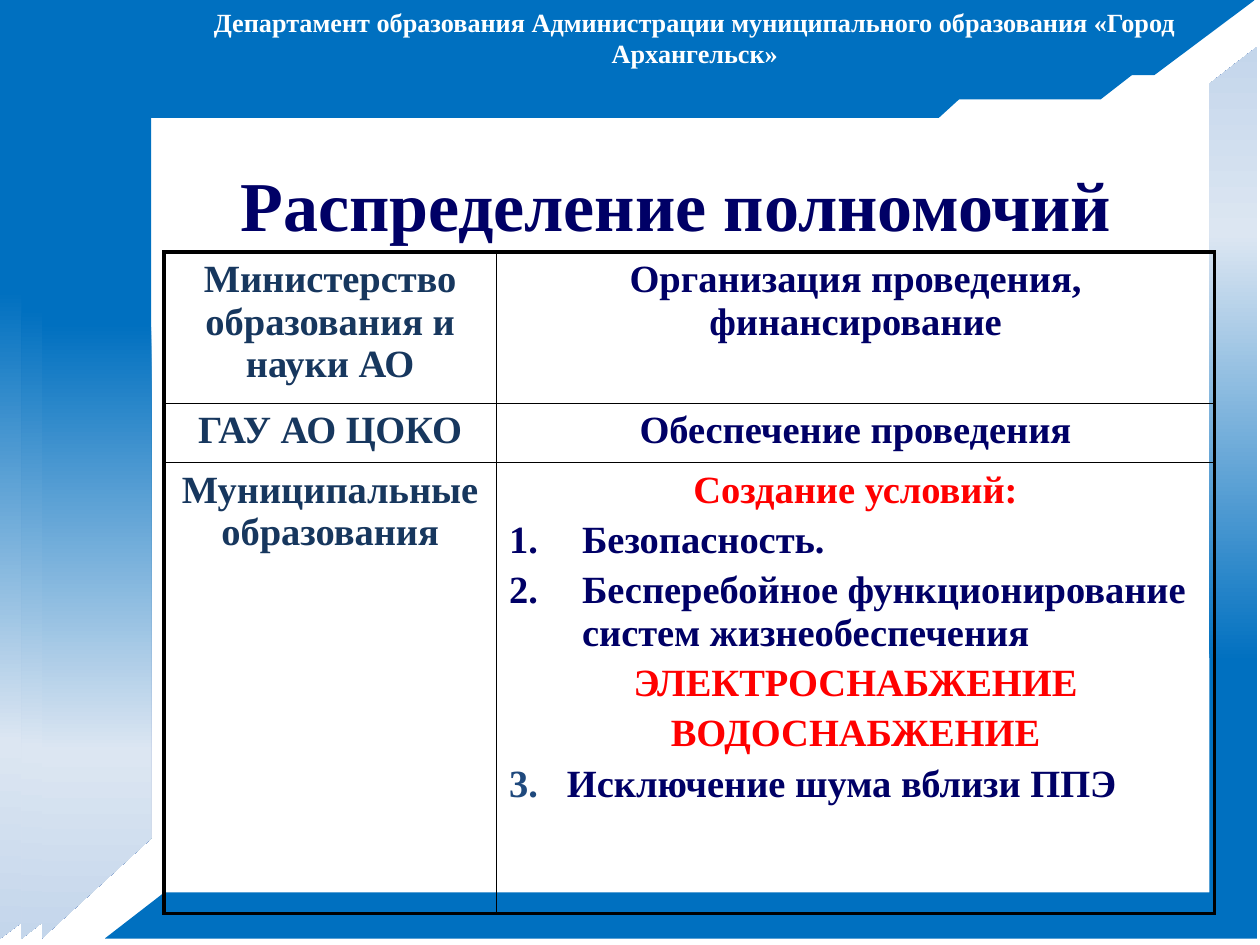
from lxml.etree import SubElement, fromstring
from pptx import Presentation
from pptx.dml.color import RGBColor
from pptx.enum.shapes import MSO_SHAPE
from pptx.enum.text import PP_ALIGN
from pptx.oxml.ns import nsdecls, qn
from pptx.util import Inches, Pt

BLUE = RGBColor(0x00, 0x70, 0xC0)
PALE = RGBColor(0xDC, 0xE6, 0xF2)
MIST = RGBColor(0xC4, 0xD6, 0xEB)
PINK = RGBColor(0xFF, 0xEB, 0xFA)
WHITE = RGBColor(0xFF, 0xFF, 0xFF)
BLACK = RGBColor(0x00, 0x00, 0x00)
NAVY = RGBColor(0x00, 0x00, 0x66)
STEEL = RGBColor(0x17, 0x37, 0x5E)
SLATE = RGBColor(0x1F, 0x49, 0x7D)
RED = RGBColor(0xFF, 0x00, 0x00)

deck = Presentation()
deck.slide_width, deck.slide_height = Inches(10), Inches(7.5)
slide = deck.slides.add_slide(deck.slide_layouts[6])
col, row = deck.slide_width / 100, deck.slide_height / 100


def place(x, y, w, h):
    return [int(v) for v in (x * col, y * row, w * col, h * row)]


def write(para, text, size, color, align):
    para.alignment = align
    run = para.add_run()
    run.text = text
    look = {"name": "Times New Roman", "size": Pt(size), "bold": True}
    for key, value in look.items():
        setattr(run.font, key, value)
    run.font.color.rgb = color


stops = [(31, BLUE), (79, PALE), (100, MIST), (100, PINK)]
marks = "".join(
    f'<a:gs pos="{pos * 1000}"><a:srgbClr val="{tint}"/></a:gs>' for pos, tint in stops
)
blend = (
    f'<a:gradFill {nsdecls("a")} rotWithShape="1"><a:gsLst>{marks}</a:gsLst>'
    '<a:lin ang="5400000" scaled="0"/></a:gradFill>'
)
frames = [
    ((0, 0, 99.6, 99.33), 0.08, 0.16, 0),
    ((1.7, 2.8, 93.1, 96.53), 0.08, 0.112, 0),
    ((3.3, 4.93, 77.4, 94.4), 0.08, 0.123, 0),
    ((8.3, 4.93, 91.5, 94.4), 0.052, 0.054, 180),
]
for box, top, side, turn in frames:
    frame = slide.shapes.add_shape(MSO_SHAPE.HALF_FRAME, *place(*box))
    frame.adjustments[0], frame.adjustments[1] = top, side
    frame.rotation = turn
    frame.shadow.inherit = False
    frame.line.fill.background()
    frame._element.spPr.find(qn("a:prstGeom")).addnext(fromstring(blend))

labels = [
    ((9.5, 0, 91.3, 4.67), 15, WHITE,
     "Департамент образования Администрации муниципального образования «Город Архангельск»"),
    ((16.9, 16.4, 73.5, 10.27), 40, NAVY, "Распределение полномочий"),
]
for box, size, color, text in labels:
    label = slide.shapes.add_textbox(*place(*box)).text_frame
    label.word_wrap = True
    write(label.paragraphs[0], text, size, color, PP_ALIGN.CENTER)

MID, JUST, LEFT = PP_ALIGN.CENTER, PP_ALIGN.JUSTIFY, PP_ALIGN.LEFT
cells = [
    [[("Министерство образования и науки АО", STEEL, MID, 0, None)],
     [("Организация проведения, финансирование", NAVY, MID, 0, None)]],
    [[("ГАУ АО ЦОКО", STEEL, MID, 0, None)],
     [("Обеспечение проведения", NAVY, MID, 0, None)]],
    [[("Муниципальные образования", STEEL, MID, 0, None)],
     [("Создание условий:", RED, MID, 0.58, None),
      ("Безопасность.", NAVY, JUST, 0.58, (1, NAVY)),
      ("Бесперебойное функционирование систем жизнеобеспечения", NAVY, LEFT, 0.58, (1, NAVY)),
      ("ЭЛЕКТРОСНАБЖЕНИЕ", RED, MID, 0.58, None),
      ("ВОДОСНАБЖЕНИЕ", RED, MID, 0.58, None),
      ("Исключение шума вблизи ППЭ", NAVY, JUST, 0.46, (3, SLATE))]],
]
table = slide.shapes.add_table(3, 2, *place(13, 26.67, 83.4, 70)).table
table.first_row = table.horz_banding = False
for part, width in zip(table.columns, (26.4, 57)):
    part.width = int(width * col)
for part, height in zip(table.rows, (16, 6.27, 47.73)):
    part.height = int(height * row)

for r, line in enumerate(cells):
    for c, paras in enumerate(line):
        cell = table.cell(r, c)
        for i, (text, color, align, hang, item) in enumerate(paras):
            frame = cell.text_frame
            para = frame.add_paragraph() if i else frame.paragraphs[0]
            props = para._p.get_or_add_pPr()
            if hang:
                props.set("marL", str(Inches(hang)))
                props.set("indent", str(-Inches(hang)))
            if i:
                para.space_before = Pt(4.4)
            if item:
                start, tint = item
                shade = SubElement(props, qn("a:buClr"))
                SubElement(shade, qn("a:srgbClr"), val=str(tint))
                SubElement(props, qn("a:buFont"), typeface="Times New Roman")
                mark = SubElement(props, qn("a:buAutoNum"), type="arabicPeriod")
                if start > 1:
                    mark.set("startAt", str(start))
            write(para, text, 22, color, align)
        cell.fill.background()
        edges = {"L": c == 0, "R": c == 1, "T": r == 0, "B": r == 2}
        for i, (side, outer) in enumerate(edges.items()):
            rule = fromstring(
                f'<a:ln{side} {nsdecls("a")} w="{Pt(2.25 if outer else 1)}"><a:solidFill>'
                f'<a:srgbClr val="{BLACK}"/></a:solidFill></a:ln{side}>'
            )
            cell._tc.get_or_add_tcPr().insert(i, rule)

deck.save("out.pptx")
